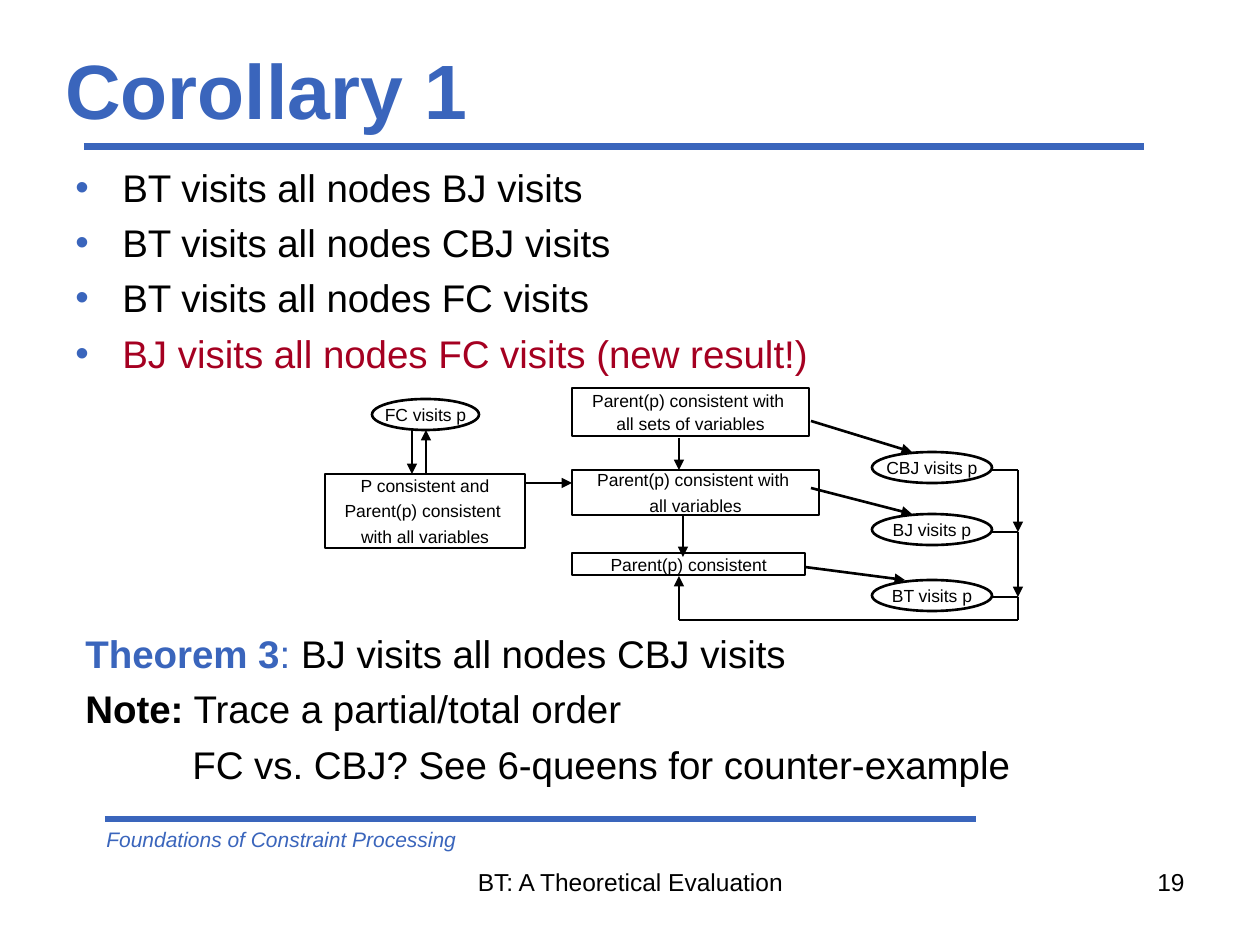
from lxml.etree import SubElement
from pptx import Presentation
from pptx.dml.color import RGBColor
from pptx.enum.shapes import MSO_CONNECTOR as Wire, MSO_SHAPE as Shape
from pptx.enum.text import MSO_ANCHOR as Anchor, PP_ALIGN as Align
from pptx.oxml.ns import qn
from pptx.util import Emu, Pt

BLUE, BLACK, RED, WHITE = "3A65BC", "000000", "A50021", "FFFFFF"


def px(length):
    return Emu(round(length * 914400 / 126))


def color(code):
    return RGBColor.from_string(code)


class Sheet:
    font = "Arial"

    def __init__(self, deck):
        self.page = deck.slides.add_slide(deck.slide_layouts[6])

    def style(self, span, size, ink=BLACK, bold=False, italic=False):
        span.font.name = self.font
        span.font.size = Pt(size)
        span.font.bold = bold
        span.font.italic = italic
        span.font.color.rgb = color(ink)

    def indent(self, para, left, first, bullet=None):
        props = para._p.get_or_add_pPr()
        props.set("marL", str(px(left)))
        props.set("indent", str(px(first)))
        if bullet:
            tint = SubElement(props, qn("a:buClr"))
            SubElement(tint, qn("a:srgbClr")).set("val", bullet)
            SubElement(props, qn("a:buFont")).set("typeface", self.font)
            SubElement(props, qn("a:buChar")).set("char", "•")

    def fill_text(self, frame, lines, size, align=Align.LEFT, gap=0, **look):
        """Write one paragraph per line, with a gap between them."""
        frame.text = "\n".join(lines)
        for index, para in enumerate(frame.paragraphs):
            para.alignment = align
            para.space_before = Pt(gap if index else 0)
            for span in para.runs:
                self.style(span, size, **look)
        return frame.paragraphs

    def text(self, at, lines, size, top=6, anchor=Anchor.TOP, **look):
        frame = self.page.shapes.add_textbox(*map(px, at)).text_frame
        frame.word_wrap = True
        frame.margin_top = px(top)
        frame.vertical_anchor = anchor
        return self.fill_text(frame, lines, size, **look)

    def node(self, kind, at, lines, gap=2.5):
        box = self.page.shapes.add_shape(kind, *map(px, at))
        box.shadow.inherit = False
        box.fill.solid()
        box.fill.fore_color.rgb = color(WHITE)
        box.line.color.rgb = color(BLACK)
        box.line.width = Pt(1.5)
        frame = box.text_frame
        frame.word_wrap = False
        frame.vertical_anchor = Anchor.MIDDLE
        self.fill_text(frame, lines, 10, Align.CENTER, gap)

    def line(self, ends, ink=BLACK, width=1.5, arrow=False):
        wire = self.page.shapes.add_connector(Wire.STRAIGHT, *map(px, ends))
        wire.line.color.rgb = color(ink)
        wire.line.width = Pt(width)
        if arrow:
            SubElement(wire.line._get_or_add_ln(), qn("a:tailEnd")).set("type", "triangle")
        SubElement(wire._element.spPr, qn("a:effectLst"))


def main():
    deck = Presentation()
    deck.slide_width, deck.slide_height = px(1260), px(945)
    sheet = Sheet(deck)

    # Rules and footer
    sheet.line((84, 147, 1144, 147), BLUE, 4)
    sheet.line((105, 819, 976, 819), BLUE, 4)
    sheet.text((94, 819, 662, 38), ["Foundations of Constraint Processing"], 12,
               top=8, ink=BLUE, italic=True)
    sheet.text((431, 861, 399, 66), ["BT: A Theoretical Evaluation"], 14, align=Align.CENTER)
    sheet.text((903, 861, 294, 66), ["19"], 14, align=Align.RIGHT)

    # Title
    sheet.text((53, 42, 1134, 94), ["Corollary 1"], 44, anchor=Anchor.MIDDLE,
               ink=BLUE, bold=True)

    # Bulleted results
    results = sheet.text((63, 154, 1134, 267), [
        "BT visits all nodes BJ visits",
        "BT visits all nodes CBJ visits",
        "BT visits all nodes FC visits",
        "BJ visits all nodes FC visits (new result!)",
    ], 22, top=10, gap=5.2)
    for para in results:
        sheet.indent(para, 47, -47, BLUE)
    results[-1].runs[0].font.color.rgb = color(RED)

    # Theorem and note: a bold lead, then plain text
    theorem, note, question = sheet.text((73, 620, 1134, 183), [
        "Theorem 3", "Note:", "FC vs. CBJ? See 6-queens for counter-example",
    ], 22, top=10, gap=5.2)
    for para, ink in ((theorem, BLUE), (note, BLACK)):
        sheet.indent(para, 47, -47)
        sheet.style(para.runs[0], 22, ink, bold=True)
    sheet.indent(question, 107, 0)
    for para, words, ink in ((theorem, ": ", BLUE),
                             (theorem, "BJ visits all nodes CBJ visits", BLACK),
                             (note, " Trace a partial/total order", BLACK)):
        span = para.add_run()
        span.text = words
        sheet.style(span, 22, ink)

    # Diagram: visited nodes
    sheet.node(Shape.OVAL, (372, 399, 107, 31), ["FC visits p"])
    for name, top in (("CBJ", 452), ("BJ", 514), ("BT", 580)):
        sheet.node(Shape.OVAL, (872, top, 120, 31), [f"{name} visits p"])

    # Diagram: consistency conditions
    sheet.node(Shape.RECTANGLE, (572, 388, 237, 48),
               ["Parent(p) consistent with ", "all sets of variables"], gap=0.6)
    sheet.node(Shape.RECTANGLE, (572, 470, 247, 45),
               ["Parent(p) consistent with ", "all variables"])
    sheet.node(Shape.RECTANGLE, (572, 553, 233, 22), ["Parent(p) consistent"])
    sheet.node(Shape.RECTANGLE, (325, 474, 200, 74),
               ["P consistent and", "Parent(p) consistent ", "with all variables"])

    # Diagram: implications
    for ends in ((412, 430, 412, 474), (426, 474, 426, 430), (525, 483, 572, 483),
                 (679, 438, 679, 470), (683, 514, 683, 557),
                 (811, 421, 912, 452), (811, 488, 912, 514), (805, 567, 905, 580),
                 (1018, 470, 1018, 532), (1018, 532, 1018, 597), (679, 620, 679, 576)):
        sheet.line(ends, arrow=True)

    # Diagram: plain links on the right and below
    for y in (470, 532, 597):
        sheet.line((992, y, 1018, y))
    sheet.line((1018, 597, 1018, 620))
    sheet.line((679, 620, 1018, 620))

    deck.save("out.pptx")


if __name__ == "__main__":
    main()
